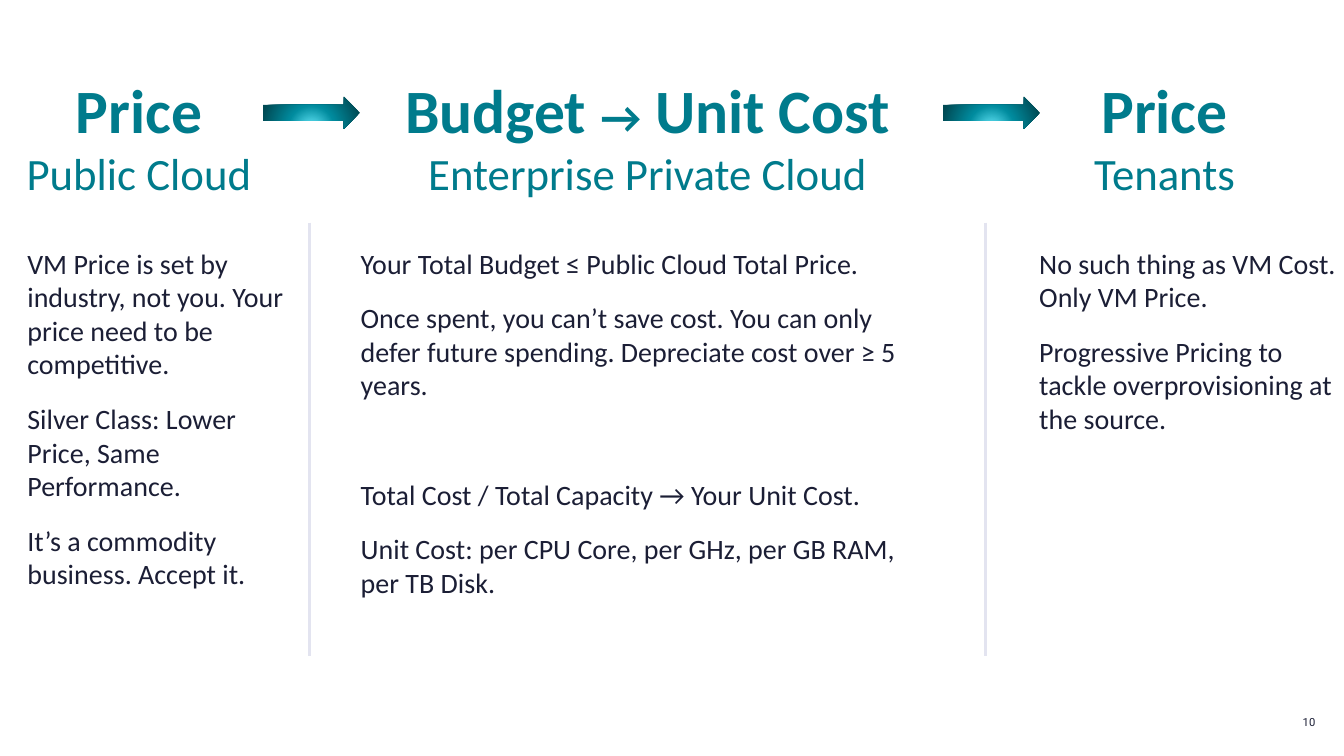
from dataclasses import dataclass

from lxml.etree import SubElement
from pptx import Presentation
from pptx.dml.color import RGBColor
from pptx.enum.shapes import MSO_CONNECTOR, MSO_SHAPE
from pptx.enum.text import MSO_ANCHOR, MSO_AUTO_SIZE, PP_ALIGN
from pptx.oxml import parse_xml
from pptx.oxml.ns import nsdecls, qn
from pptx.shapes.autoshape import Shape
from pptx.slide import Slide
from pptx.text.text import Font
from pptx.util import Cm, Pt

TEAL = "007B8C"
INK = "1B1E35"
DIVIDER = "E3E4F0"
ARROW_STOPS = ((0, "6BEDFF"), (46, "008B9E"), (100, "004A54"))

HEADING_TOP, HEADING_HEIGHT = 1.68, 3.51
BODY_TOP = 6.2
ARROW_LEFTS = (6.63, 23.77)
DIVIDER_LEFTS = (7.8, 24.84)
PARAGRAPH_GAP = 15
SECTION_GAP = 54


@dataclass(frozen=True)
class Box:
    left: float
    top: float
    width: float
    height: float


@dataclass(frozen=True)
class Column:
    heading: tuple[tuple[str, int], ...]
    subheading: str
    heading_box: Box
    sections: tuple[tuple[str, ...], ...]
    body_box: Box
    is_main: bool = False


COLUMNS = (
    Column(
        (("Price", 44),),
        "Public Cloud",
        Box(0.38, HEADING_TOP, 6.25, HEADING_HEIGHT),
        ((
            "VM Price is set by industry, not you. Your price need to be competitive.",
            "Silver Class: Lower Price, Same Performance.",
            "It’s a commodity business. Accept it.",
        ),),
        Box(0.69, BODY_TOP, 6.48, 8.76),
    ),
    Column(
        (("Budget ", 44), ("→", 32), (" Unit Cost", 44)),
        "Enterprise Private Cloud",
        Box(9.65, HEADING_TOP, 13.34, HEADING_HEIGHT),
        (
            (
                "Your Total Budget ≤ Public Cloud Total Price.",
                "Once spent, you can’t save cost. You can only defer future spending. "
                "Depreciate cost over ≥ 5 years.",
            ),
            (
                "Total Cost / Total Capacity → Your Unit Cost.",
                "Unit Cost: per CPU Core, per GHz, per GB RAM, per TB Disk.",
            ),
        ),
        Box(9.09, BODY_TOP, 14.5, 8.97),
        is_main=True,
    ),
    Column(
        (("Price", 44),),
        "Tenants",
        Box(27.28, HEADING_TOP, 4.14, HEADING_HEIGHT),
        ((
            "No such thing as VM Cost. Only VM Price.",
            "Progressive Pricing to tackle overprovisioning at the source.",
        ),),
        Box(26.19, BODY_TOP, 7.52, 4.8),
    ),
)


def color(hex_code: str) -> RGBColor:
    return RGBColor.from_string(hex_code)


def style_font(font: Font, size: int, hex_code: str, bold: bool = False,
               name: str = "Calibri") -> None:
    font.name = name
    font.size = Pt(size)
    font.bold = bold
    font.color.rgb = color(hex_code)


def place(shape: Shape, box: Box) -> None:
    shape.left, shape.top = Cm(box.left), Cm(box.top)
    shape.width, shape.height = Cm(box.width), Cm(box.height)


def add_text_box(slide: Slide) -> Shape:
    return slide.shapes.add_textbox(0, 0, 0, 0)


def remove_margins(shape: Shape) -> None:
    frame = shape.text_frame
    frame.margin_left = frame.margin_top = frame.margin_right = frame.margin_bottom = 0


def fill_heading(shape: Shape, column: Column) -> None:
    place(shape, column.heading_box)
    frame = shape.text_frame
    frame.word_wrap = False
    frame.auto_size = MSO_AUTO_SIZE.NONE
    frame.vertical_anchor = MSO_ANCHOR.TOP
    heading = frame.paragraphs[0]
    heading.alignment = PP_ALIGN.CENTER
    for text, size in column.heading:
        run = heading.add_run()
        run.text = text
        style_font(run.font, size, TEAL, bold=True)
    subheading = frame.add_paragraph()
    subheading.text = column.subheading
    subheading.alignment = PP_ALIGN.CENTER
    style_font(subheading.font, 32, TEAL)


def fill_body(shape: Shape, column: Column) -> None:
    place(shape, column.body_box)
    remove_margins(shape)
    frame = shape.text_frame
    frame.word_wrap = True
    frame.auto_size = MSO_AUTO_SIZE.NONE
    paragraph = frame.paragraphs[0]
    gap = 0
    for section in column.sections:
        for text in section:
            if gap:
                paragraph = frame.add_paragraph()
            paragraph.text = text
            paragraph.space_before = Pt(gap)
            properties = paragraph._p.get_or_add_pPr()
            properties.set("marL", "0")
            properties.set("indent", "0")
            SubElement(properties, qn("a:buNone"))
            style_font(paragraph.font, 20, INK)
            gap = PARAGRAPH_GAP
        gap = SECTION_GAP


def add_arrow(slide: Slide, left: float) -> None:
    arrow = slide.shapes.add_shape(
        MSO_SHAPE.RIGHT_ARROW, Cm(left), Cm(2.44), Cm(2.44), Cm(0.81))
    arrow.shadow.inherit = False
    arrow.line.fill.background()
    arrow.fill.background()
    stops = "".join(
        f'<a:gs pos="{percent * 1000}"><a:srgbClr val="{hex_code}"/></a:gs>'
        for percent, hex_code in ARROW_STOPS)
    gradient = parse_xml(
        f'<a:gradFill {nsdecls("a")} rotWithShape="1"><a:gsLst>{stops}</a:gsLst>'
        '<a:path path="circle"><a:fillToRect l="50000" t="130000" r="50000" b="-30000"/>'
        '</a:path></a:gradFill>')
    properties = arrow._element.spPr
    properties.replace(properties.find(qn("a:noFill")), gradient)


def add_divider(slide: Slide, left: float) -> None:
    divider = slide.shapes.add_connector(
        MSO_CONNECTOR.STRAIGHT, Cm(left), Cm(5.61), Cm(left), Cm(16.54))
    divider.line.color.rgb = color(DIVIDER)
    divider.line.width = Pt(2)
    SubElement(divider._element.spPr, qn("a:effectLst"))


def add_page_number(slide: Slide, number: str) -> None:
    shape = add_text_box(slide)
    place(shape, Box(31.93, 17.96, 1.22, 0.51))
    remove_margins(shape)
    shape.text_frame.vertical_anchor = MSO_ANCHOR.MIDDLE
    paragraph = shape.text_frame.paragraphs[0]
    paragraph.text = number
    paragraph.alignment = PP_ALIGN.RIGHT
    paragraph.line_spacing = 0.9
    style_font(paragraph.font, 8, INK, name="Roboto")


def main() -> None:
    presentation = Presentation()
    presentation.slide_width, presentation.slide_height = Cm(33.87), Cm(19.05)
    slide = presentation.slides.add_slide(presentation.slide_layouts[1])
    for column in COLUMNS:
        fill_heading(slide.shapes.title if column.is_main else add_text_box(slide), column)
        fill_body(slide.placeholders[1] if column.is_main else add_text_box(slide), column)
    for left in ARROW_LEFTS:
        add_arrow(slide, left)
    for left in DIVIDER_LEFTS:
        add_divider(slide, left)
    add_page_number(slide, "10")
    presentation.save("out.pptx")


if __name__ == "__main__":
    main()
